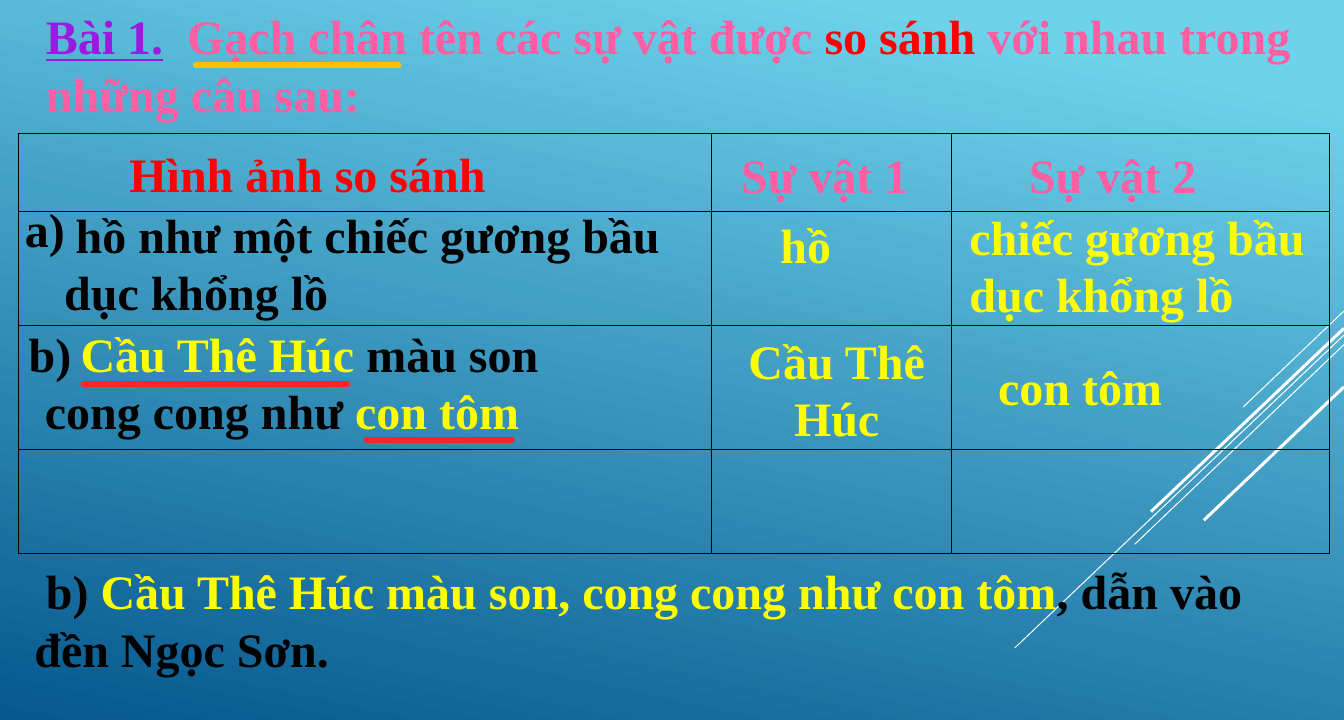
from lxml import etree
from pptx import Presentation
from pptx.dml.color import RGBColor
from pptx.enum.shapes import MSO_CONNECTOR
from pptx.enum.text import MSO_AUTO_SIZE, PP_ALIGN
from pptx.oxml.ns import qn
from pptx.util import Inches, Pt

STRAIGHT = MSO_CONNECTOR.STRAIGHT
LEFT, CENTER = PP_ALIGN.LEFT, PP_ALIGN.CENTER
FIT_SHAPE = MSO_AUTO_SIZE.SHAPE_TO_FIT_TEXT

FONT = "Times New Roman"
BLACK, WHITE, YELLOW = "000000", "FFFFFF", "FFFF00"
PINK, RED, PURPLE = "FF5EA2", "FF0000", "9C1AE0"
GOLD, BRIGHT_RED = "FFC000", "FF2525"

ONE_LINE, TWO_LINES = 0.71, 1.31


def color(hex_string):
    return RGBColor.from_string(hex_string)


def set_background(slide, start, end):
    fill = slide.background.fill
    fill.gradient()
    fill.gradient_angle = 258
    for stop, position, hex_string in zip(fill.gradient_stops, (0.1, 1), (start, end)):
        stop.position = position
        stop.color.rgb = color(hex_string)


def add_line(slide, start, end, hex_string, width, cap="flat"):
    connector = slide.shapes.add_connector(
        STRAIGHT, *(Inches(value) for value in (*start, *end)))
    connector.line.color.rgb = color(hex_string)
    connector.line.width = Pt(width)
    properties = connector._element.spPr
    properties.find(qn("a:ln")).set("cap", cap)
    etree.SubElement(properties, qn("a:effectLst"))


def add_text(slide, text, left, top, width, height=ONE_LINE, fill=BLACK,
             align=LEFT, indent=0, tab=None):
    """Add bold text; text is a string or a list of (string, colour) pairs."""
    box = slide.shapes.add_textbox(*(Inches(value) for value in (left, top, width, height)))
    frame = box.text_frame
    frame.word_wrap = True
    frame.auto_size = FIT_SHAPE
    paragraph = frame.paragraphs[0]
    paragraph.alignment = align
    properties = paragraph._p.get_or_add_pPr()
    if indent:
        properties.set("indent", str(Inches(indent)))
    if tab:
        tabs = etree.SubElement(properties, qn("a:tabLst"))
        etree.SubElement(tabs, qn("a:tab"), pos=str(Inches(tab)), algn="l")
    for part, hex_string in [(text, fill)] if isinstance(text, str) else text:
        run = paragraph.add_run()
        run.text = part
        run.font.name = FONT
        run.font.size = Pt(36)
        run.font.bold = True
        run.font.color.rgb = color(hex_string)
    return paragraph


def set_borders(cell, hex_string, width):
    properties = cell._tc.get_or_add_tcPr()
    for index, side in enumerate(("lnL", "lnR", "lnT", "lnB")):
        border = etree.Element(qn(f"a:{side}"), w=str(Pt(width)))
        fill = etree.SubElement(border, qn("a:solidFill"))
        etree.SubElement(fill, qn("a:srgbClr"), val=hex_string)
        properties.insert(index, border)


def add_grid(slide, left, top, widths, heights):
    table = slide.shapes.add_table(
        len(heights), len(widths), Inches(left), Inches(top),
        Inches(sum(widths)), Inches(sum(heights))).table
    for column, width in zip(table.columns, widths):
        column.width = Inches(width)
    for row, height in zip(table.rows, heights):
        row.height = Inches(height)
    for cell in table.iter_cells():
        cell.fill.background()
        set_borders(cell, BLACK, 1)


def add_decoration(slide):
    for start, end, width in (
            ((14, 3.24), (12.95, 4.24), 0.75),
            ((14, 3.49), (10.57, 6.75), 0.75),
            ((14, 3.59), (11.82, 5.67), 0.75),
            ((14, 3.42), (11.99, 5.33), 2.25),
            ((14, 4.03), (12.54, 5.42), 2.25)):
        add_line(slide, start, end, WHITE, width)


def add_heading(slide):
    title = add_text(slide, [
        ("Bài 1.", PURPLE),
        ("\tGạch chân tên các sự vật được ", PINK),
        ("so sánh ", RED),
        ("với nhau trong những câu sau:", PINK),
    ], 0.38, 0.02, 13.25, TWO_LINES, tab=1.47)
    title.runs[0].font.underline = True


def add_table_texts(slide):
    add_text(slide, "Hình ảnh so sánh", 1.25, 1.46, 4.67, fill=RED)
    add_text(slide, "Sự vật 1", 7.62, 1.47, 2.25, fill=PINK)
    add_text(slide, "Sự vật 2", 10.3, 1.47, 2.58, fill=PINK, align=CENTER)

    add_text(slide, "a)", 0.16, 2.03, 0.67)
    add_text(slide, "hồ như một chiếc gương bầu dục khổng lồ",
             0.57, 2.09, 7.06, TWO_LINES, indent=0.12)
    add_text(slide, "hồ", 8.03, 2.2, 1.42, fill=YELLOW)
    add_text(slide, "chiếc gương bầu dục khổng lồ", 10, 2.11, 3.83, TWO_LINES, YELLOW)

    add_text(slide, "b)", 0.2, 3.33, 0.67)
    add_text(slide, [
        ("Cầu Thê Húc ", YELLOW),
        ("màu son cong cong như ", BLACK),
        ("con tôm", YELLOW),
    ], 0.37, 3.33, 6.42, TWO_LINES, indent=0.37)
    add_text(slide, "Cầu Thê Húc", 7.59, 3.4, 2.25, TWO_LINES, YELLOW, CENTER)
    add_text(slide, "con tôm", 10.3, 3.67, 3, fill=YELLOW)


def add_full_sentence(slide):
    add_text(slide, [
        ("b) ", BLACK),
        ("Cầu Thê Húc màu son, cong cong như con tôm", YELLOW),
        (", dẫn vào đền Ngọc Sơn.", BLACK),
    ], 0.26, 5.8, 13.37, TWO_LINES, indent=0.12)


def add_underlines(slide):
    for left, right, top, hex_string in (
            (2.04, 4.15, 0.68, GOLD),
            (0.87, 3.62, 4, BRIGHT_RED),
            (3.82, 5.33, 4.58, BRIGHT_RED)):
        add_line(slide, (left, top), (right, top), hex_string, 4.5, cap="rnd")


def main():
    presentation = Presentation()
    presentation.slide_width = Inches(14)
    presentation.slide_height = Inches(7.5)
    slide = presentation.slides.add_slide(presentation.slide_layouts[6])
    set_background(slide, "6ED2EB", "06588E")
    add_decoration(slide)
    add_grid(slide, 0.19, 1.39, (7.22, 2.5, 3.94), (0.81, 1.19, 1.29, 1.09))
    add_heading(slide)
    add_table_texts(slide)
    add_full_sentence(slide)
    add_underlines(slide)
    presentation.save("out.pptx")


if __name__ == "__main__":
    main()
